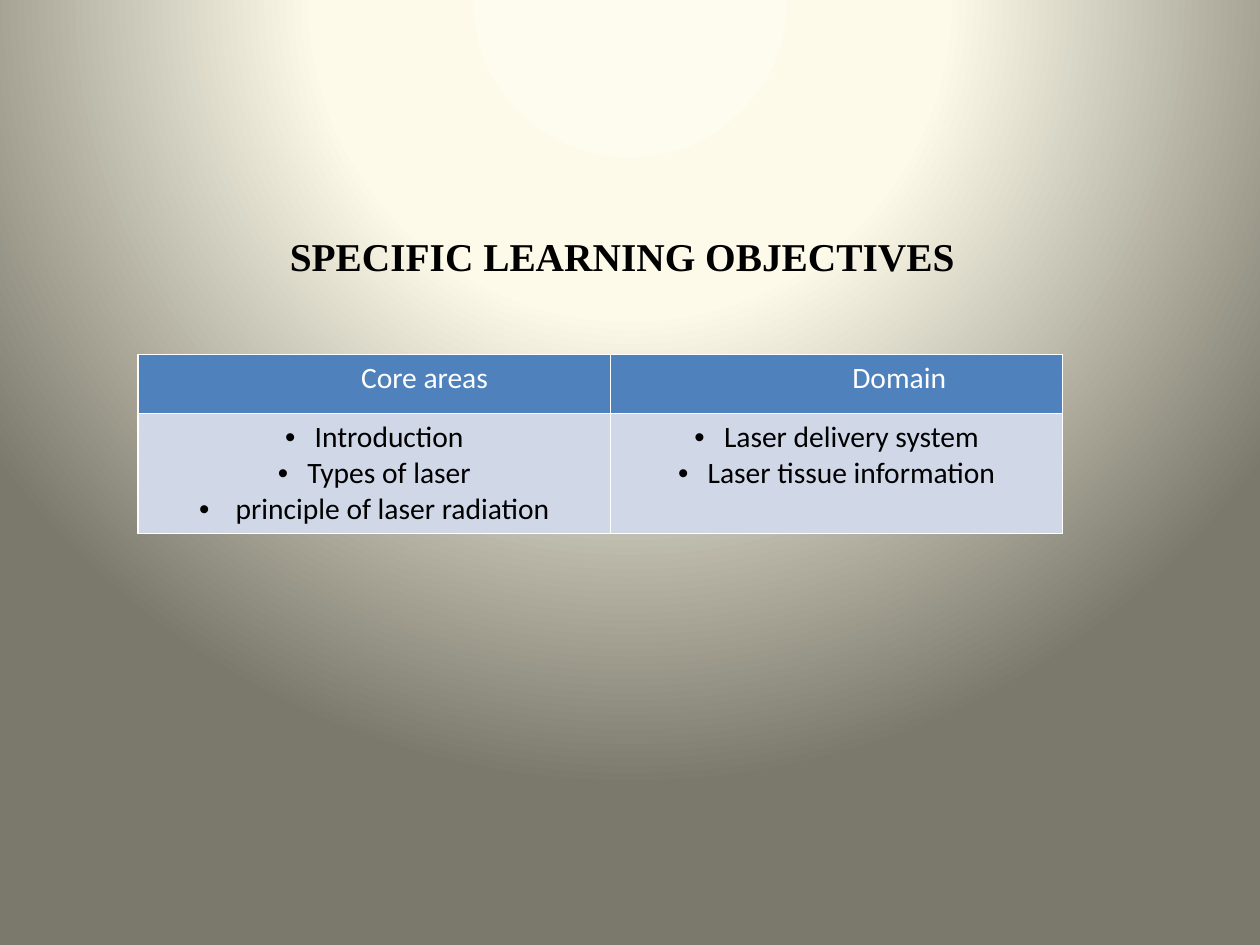
from lxml.etree import SubElement
from pptx import Presentation
from pptx.dml.color import RGBColor
from pptx.enum.text import MSO_AUTO_SIZE, PP_ALIGN
from pptx.oxml import parse_xml
from pptx.oxml.ns import nsdecls, qn
from pptx.util import Inches, Pt

TITLE = "SPECIFIC LEARNING OBJECTIVES"
# heading, its left indent, then bullets with their hanging indents
COLUMNS = [
    ("Core areas", 0.85, [("Introduction", 0.25), ("Types of laser", 0.25),
                          ("principle of laser radiation", 0.31)]),
    ("Domain", 1.06, [("Laser delivery system", 0.25),
                      ("Laser tissue information", 0.25)]),
]
COLUMN_WIDTHS = [4, 3.83]
ROW_HEIGHTS = [0.5, 1]
GLOW = [(0, "FEFCEE"), (40, "FDFAEA"), (100, "7B796B")]
BLUE, PALE, WHITE, BLACK = "4F81BD", "D0D8E8", "FFFFFF", "000000"


def rgb(value):
    return RGBColor.from_string(value)


def write(paragraph, text, size=18, font="Calibri", color=BLACK, bold=False,
          indent=0, bullet=False):
    paragraph.alignment = PP_ALIGN.CENTER
    properties = paragraph._p.get_or_add_pPr()
    properties.set("marL", str(Inches(indent)))
    if bullet:
        properties.set("indent", str(-Inches(indent)))
        SubElement(properties, qn("a:buFont"), typeface="Arial")
        SubElement(properties, qn("a:buChar"), char="•")
    run = paragraph.add_run()
    run.text = text
    run.font.size, run.font.name, run.font.bold = Pt(size), font, bold
    run.font.color.rgb = rgb(color)


def paint_background(slide):
    """Radial glow centred above the top edge."""
    stops = "".join(f'<a:gs pos="{share * 1000}"><a:srgbClr val="{color}"/></a:gs>'
                    for share, color in GLOW)
    slide.background.fill.solid()
    solid = next(slide._element.iter(qn("a:solidFill")))
    solid.getparent().replace(solid, parse_xml(
        f'<a:gradFill rotWithShape="1" {nsdecls("a")}><a:gsLst>{stops}</a:gsLst>'
        '<a:path path="circle"><a:fillToRect l="50000" t="-80000" r="50000" '
        'b="180000"/></a:path></a:gradFill>'))


def style_cell(cell, fill):
    properties = cell._tc.get_or_add_tcPr()
    for side in ("lnL", "lnR", "lnT", "lnB"):
        properties.append(parse_xml(
            f'<a:{side} w="{Pt(1)}" {nsdecls("a")}><a:solidFill>'
            f'<a:srgbClr val="{WHITE}"/></a:solidFill></a:{side}>'))
    cell.fill.solid()
    cell.fill.fore_color.rgb = rgb(fill)


def add_objectives(slide):
    table = slide.shapes.add_table(
        len(ROW_HEIGHTS), len(COLUMNS), Inches(1.17), Inches(3),
        Inches(sum(COLUMN_WIDTHS)), Inches(sum(ROW_HEIGHTS))).table
    for row, height in zip(table.rows, ROW_HEIGHTS):
        row.height = Inches(height)
    for index, (heading, heading_indent, bullets) in enumerate(COLUMNS):
        table.columns[index].width = Inches(COLUMN_WIDTHS[index])
        head, body = table.cell(0, index), table.cell(1, index)
        style_cell(head, BLUE)
        style_cell(body, PALE)
        write(head.text_frame.paragraphs[0], heading, color=WHITE,
              indent=heading_indent)
        for number, (text, indent) in enumerate(bullets):
            frame = body.text_frame
            paragraph = frame.add_paragraph() if number else frame.paragraphs[0]
            write(paragraph, text, indent=indent, bullet=True)


def add_title(slide):
    frame = slide.shapes.add_textbox(
        Inches(2.33), Inches(1.92), Inches(5.98), Inches(0.5)).text_frame
    frame.word_wrap = False
    frame.auto_size = MSO_AUTO_SIZE.SHAPE_TO_FIT_TEXT
    frame.margin_right = Inches(0.2)
    write(frame.paragraphs[0], TITLE, size=24, font="Times New Roman", bold=True)


def main():
    deck = Presentation()
    deck.slide_width, deck.slide_height = Inches(10.67), Inches(8)
    slide = deck.slides.add_slide(deck.slide_layouts[6])
    paint_background(slide)
    add_objectives(slide)
    add_title(slide)
    deck.save("out.pptx")


if __name__ == "__main__":
    main()
